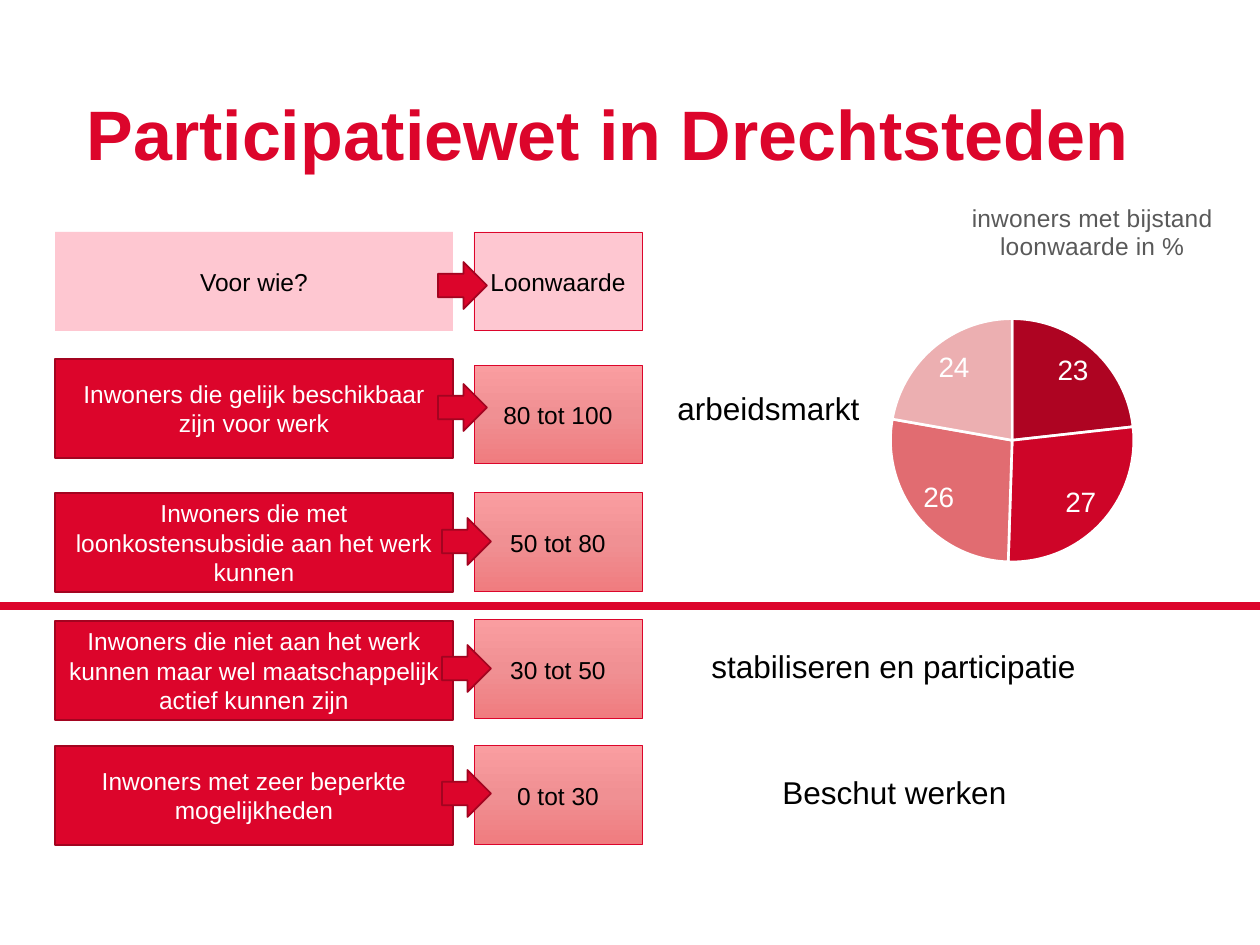
"""Build the Participatiewet slide: target groups, wage value and a pie of residents on benefits."""
from copy import deepcopy

from lxml.etree import SubElement
from pptx import Presentation
from pptx.chart.data import CategoryChartData
from pptx.dml.color import RGBColor
from pptx.enum.chart import XL_CHART_TYPE as ChartType, XL_LABEL_POSITION as LabelPosition
from pptx.enum.shapes import MSO_CONNECTOR as Connector, MSO_SHAPE as Shape
from pptx.enum.text import MSO_ANCHOR as Anchor, MSO_AUTO_SIZE as AutoSize, PP_ALIGN as Align
from pptx.oxml import parse_xml
from pptx.oxml.ns import nsdecls, qn
from pptx.util import Emu, Pt

RED = RGBColor(0xDC, 0x05, 0x2B)
DARK_RED = RGBColor(0xA3, 0x04, 0x20)
PINK = RGBColor(0xFE, 0xC7, 0xD1)
FADE = [RGBColor(0xFA, 0x9D, 0xA0), RGBColor(0xF0, 0x90, 0x93), RGBColor(0xF0, 0x7C, 0x7F)]
BLACK = RGBColor(0, 0, 0)
WHITE = RGBColor(0xFF, 0xFF, 0xFF)
GREY = RGBColor(0x59, 0x59, 0x59)
SCALE = 914400 / 126


def px(*lengths):
    return [Emu(round(length * SCALE)) for length in lengths]


def add_span(para, text, size, color, bold=False):
    span = para.add_run()
    span.text = text
    span.font.name = "Arial"
    span.font.size = Pt(size)
    span.font.bold = bold
    span.font.color.rgb = color


deck = Presentation()
deck.slide_width, deck.slide_height = px(1260, 945)
page = deck.slides.add_slide(deck.slide_layouts[5])

title = page.shapes.title
title.left, title.top, title.width, title.height = px(74, 92, 1131, 92)
title.text_frame.vertical_anchor = Anchor.MIDDLE
para = title.text_frame.paragraphs[0]
para.alignment = Align.LEFT
para.line_spacing = 0.9
add_span(para, "Participatiewet in Drechtsteden", 40, RED, True)

rows = [
    ("Voor wie?", 232, "Loonwaarde", 232, 438, 262),
    ("Inwoners die gelijk beschikbaar zijn voor werk", 359, "80 tot 100", 365, 438, 384),
    ("Inwoners die met loonkostensubsidie aan het werk kunnen", 493, "50 tot 80", 493, 442, 518),
    ("Inwoners die niet aan het werk kunnen maar wel maatschappelijk actief kunnen zijn",
     621, "30 tot 50", 620, 442, 645),
    ("Inwoners met zeer beperkte mogelijkheden", 746, "0 tot 30", 746, 442, 770),
]
for index, (group, group_top, wage, wage_top, arrow_left, arrow_top) in enumerate(rows):
    header = index == 0
    group_box = page.shapes.add_shape(Shape.RECTANGLE, *px(55, group_top, 398, 99))
    wage_box = page.shapes.add_shape(Shape.RECTANGLE, *px(474, wage_top, 168, 99))
    arrow = page.shapes.add_shape(Shape.RIGHT_ARROW, *px(arrow_left, arrow_top, 49, 47))
    for box, fill, edge, weight in (
        (group_box, PINK if header else RED, None if header else DARK_RED, 1),
        (wage_box, PINK if header else None, RED, 0.5),
        (arrow, RED, DARK_RED, 1),
    ):
        box.shadow.inherit = False
        if fill is None:
            box.fill.gradient()
            box.fill.gradient_angle = 270
            for stop, color in zip(box.fill.gradient_stops, FADE[::2]):
                stop.color.rgb = color
            stops = box.element.spPr.find(qn("a:gradFill")).find(qn("a:gsLst"))
            stops.insert(1, deepcopy(stops[0]))
            stops[1].set("pos", "50000")
            box.fill.gradient_stops[1].color.rgb = FADE[1]
        else:
            box.fill.solid()
            box.fill.fore_color.rgb = fill
        if edge is None:
            box.line.fill.background()
        else:
            box.line.color.rgb = edge
            box.line.width = Pt(weight)
    for box, text, color in (
        (group_box, group, BLACK if header else WHITE),
        (wage_box, wage, BLACK),
    ):
        box.text_frame.word_wrap = True
        box.text_frame.vertical_anchor = Anchor.MIDDLE
        para = box.text_frame.paragraphs[0]
        para.alignment = Align.CENTER
        add_span(para, text, 14, color)

slices = [
    (23, "23", RGBColor(0xAE, 0x04, 0x22)),
    (27, "27", RGBColor(0xCE, 0x05, 0x28)),
    (27, "26", RGBColor(0xE1, 0x6C, 0x71)),
    (22, "24", RGBColor(0xEC, 0xAF, 0xB1)),
]
data = CategoryChartData()
data.categories = ["1", "2", "3", "4"]
data.add_series("Series 1", [value for value, label, color in slices])
chart = page.shapes.add_chart(ChartType.PIE, *px(708, 195, 520, 399), data).chart
chart.font.name = "Arial"
chart.font.size = Pt(10)
chart.font.color.rgb = BLACK
chart.has_legend = False
chart.has_title = True
heading = chart.chart_title.text_frame
add_span(heading.paragraphs[0], "inwoners met bijstand", 14, GREY)
add_span(heading.add_paragraph(), "loonwaarde in %", 14, GREY)

plot = chart.plots[0]
plot.vary_by_categories = True
plot.has_data_labels = True
labels = plot.data_labels
labels.show_value = True
labels.position = LabelPosition.INSIDE_END
labels.font.size = Pt(16)
labels.font.color.rgb = WHITE
for index, (value, label, color) in enumerate(slices):
    point = plot.series[0].points[index]
    point.format.fill.solid()
    point.format.fill.fore_color.rgb = color
    point.format.line.color.rgb = WHITE
    point.format.line.width = Pt(1.5)
    add_span(point.data_label.text_frame.paragraphs[0], label, 16, WHITE)
    point.data_label.position = LabelPosition.INSIDE_END

plot_area = chart.element.find(".//" + qn("c:plotArea"))
title_element = chart.element.find(".//" + qn("c:title"))
for parent, position, settings in (
    (plot_area, 0, [("layoutTarget", "inner"), ("xMode", "edge"), ("yMode", "edge"),
                    ("x", "0.35"), ("y", "0.31"), ("w", "0.47"), ("h", "0.61")]),
    (title_element, 1, [("xMode", "edge"), ("yMode", "edge"), ("x", "0.5"), ("y", "0.01")]),
):
    for old in parent.findall(qn("c:layout")):
        parent.remove(old)
    layout = parse_xml(f"<c:layout {nsdecls('c')}><c:manualLayout/></c:layout>")
    for name, setting in settings:
        SubElement(layout[0], qn(f"c:{name}")).set("val", setting)
    parent.insert(position, layout)

divider = page.shapes.add_connector(Connector.STRAIGHT, *px(0, 606, 1260, 606))
divider.line.color.rgb = RED
divider.line.width = Pt(4.75)
SubElement(divider.element.spPr, qn("a:effectLst"))

for text, left, top, width in (
    ("arbeidsmarkt", 665, 383, 209),
    ("stabiliseren en participatie", 699, 641, 393),
    ("Beschut werken", 770, 767, 252),
):
    box = page.shapes.add_textbox(*px(left, top, width, 50))
    box.text_frame.word_wrap = False
    box.text_frame.auto_size = AutoSize.SHAPE_TO_FIT_TEXT
    add_span(box.text_frame.paragraphs[0], text, 18, BLACK)

deck.save("out.pptx")
